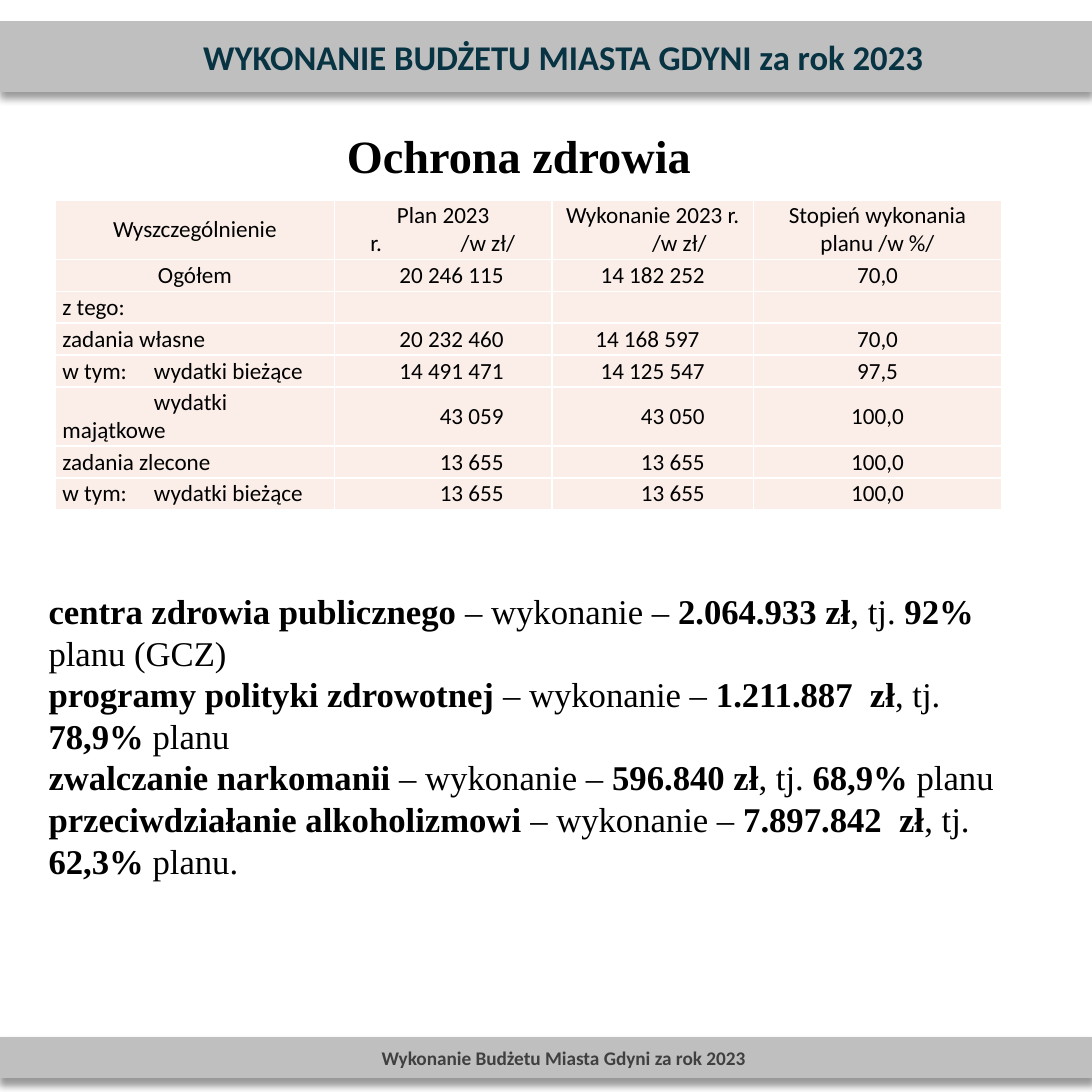
"""Build the health care slide of the city budget report."""
from dataclasses import dataclass
from itertools import cycle

from lxml import etree
from pptx import Presentation
from pptx.dml.color import RGBColor
from pptx.enum.shapes import MSO_SHAPE
from pptx.enum.text import MSO_ANCHOR, MSO_AUTO_SIZE, PP_ALIGN
from pptx.oxml.ns import qn
from pptx.util import Inches, Pt

RECT = MSO_SHAPE.RECTANGLE
TOP, MIDDLE = MSO_ANCHOR.TOP, MSO_ANCHOR.MIDDLE
NO_FIT = MSO_AUTO_SIZE.NONE
LEFT, CENTER, RIGHT = PP_ALIGN.LEFT, PP_ALIGN.CENTER, PP_ALIGN.RIGHT

COL_WIDTHS = [2.01, 1.57, 1.45, 1.79]
ROW_HEIGHTS = [0.43, 0.23, 0.23, 0.23, 0.23, 0.42, 0.23, 0.23]
COL_ALIGNS = [LEFT, RIGHT, RIGHT, CENTER]
COL_TABS = [[0.66], [0.21, 0.86], [0.67], []]
ROWS = [
    ["Wyszczególnienie", "Plan 2023\n\tr.\t/w zł/",
     "Wykonanie 2023 r.\n\t/w zł/", "Stopień wykonania planu /w %/"],
    ["Ogółem", "20 246 115", "14 182 252", "70,0"],
    ["z tego:", "", "", ""],
    ["zadania własne", "20 232 460", "14 168 597 ", "70,0"],
    ["w tym:\twydatki bieżące", "14 491 471", "14 125 547", "97,5"],
    ["\twydatki majątkowe", "43 059", "43 050", "100,0"],
    ["zadania zlecone", "13 655", "13 655", "100,0"],
    ["w tym:\twydatki bieżące", "13 655", "13 655", "100,0"],
]
PROGRAMMES = [
    ("centra zdrowia publicznego", "2.064.933 zł", "92%", " planu (GCZ)"),
    ("programy polityki zdrowotnej", "1.211.887  zł", "78,9%", " planu"),
    ("zwalczanie narkomanii", "596.840 zł", "68,9%", " planu"),
    ("przeciwdziałanie alkoholizmowi", "7.897.842  zł", "62,3%", " planu."),
]


@dataclass(frozen=True)
class Theme:
    """Colours, fonts and type sizes of the slide."""
    bar: str = "BFBFBF"
    header: str = "083343"
    footer: str = "404040"
    ink: str = "000000"
    cell: str = "FBEEE8"
    grid: str = "FFFFFF"
    sans: str = "Calibri"
    serif: str = "Times New Roman"
    title_size: int = 24
    text_size: int = 18
    table_size: int = 12
    footer_size: int = 10


class Deck:
    """Holds the theme and the current slide."""

    def __init__(self, prs, theme):
        self.theme = theme
        self.s = prs.slides.add_slide(prs.slide_layouts[1])

    def style(self, p, font, size, color, bold=False):
        for r in p.runs:
            r.font.name = font
            r.font.size = Pt(size)
            r.font.bold = bold
            r.font.color.rgb = RGBColor.from_string(color)

    def place(self, sp, left, top, width, height):
        sp.left, sp.top = Inches(left), Inches(top)
        sp.width, sp.height = Inches(width), Inches(height)
        tf = sp.text_frame
        tf.word_wrap = True
        tf.auto_size = NO_FIT
        tf.vertical_anchor = TOP
        return tf

    def bar(self, text, top, height, size, color):
        t = self.theme
        sp = self.s.shapes.add_shape(
            RECT, 0, Inches(top), Inches(7.87), Inches(height))
        sp.fill.solid()
        sp.fill.fore_color.rgb = RGBColor.from_string(t.bar)
        sp.line.color.rgb = RGBColor.from_string(t.bar)
        sp.line.width = Pt(1)
        sp.shadow.inherit = False
        effects = sp._element.spPr.find(qn("a:effectLst"))
        shadow = etree.SubElement(
            effects, qn("a:outerShdw"), blurRad=str(Pt(4)), dist=str(Pt(3)),
            dir="5400000", algn="t", rotWithShape="0")
        shade = etree.SubElement(shadow, qn("a:srgbClr"), val=t.ink)
        etree.SubElement(shade, qn("a:alpha"), val="40000")
        tf = sp.text_frame
        tf.margin_left = Inches(0.35)
        tf.vertical_anchor = MIDDLE
        tf.text = text
        p = tf.paragraphs[0]
        p.alignment = CENTER
        self.style(p, t.sans, size, color, True)

    def title(self, text):
        t = self.theme
        tf = self.place(self.s.shapes.title, 0.63, 0.87, 6.22, 0.5)
        tf.text = text
        p = tf.paragraphs[0]
        p.alignment = CENTER
        self.style(p, t.serif, t.title_size, t.ink, True)

    def programmes(self, items):
        t = self.theme
        tf = self.place(self.s.placeholders[1], 0.25, 4.2, 7.37, 2.52)
        for i, (name, amount, share, ending) in enumerate(items):
            p = tf.add_paragraph() if i else tf.paragraphs[0]
            p.space_before = Pt(0)
            p.line_spacing = 1.0
            pPr = p._p.get_or_add_pPr()
            pPr.set("marL", "0")
            pPr.set("indent", "0")
            etree.SubElement(pPr, qn("a:buNone"))
            parts = [name, " – wykonanie – ", amount, ", tj. ", share, ending]
            for text in parts:
                p.add_run().text = text
            self.style(p, t.serif, t.text_size, t.ink)
            for r, bold in zip(p.runs, cycle([True, False])):
                r.font.bold = bold

    def cell(self, cell, text, align, tabs):
        t = self.theme
        cell.margin_left = Inches(0.05)
        cell.margin_right = Inches(0.35 if align == RIGHT else 0.05)
        cell.margin_top = cell.margin_bottom = Inches(0.01)
        cell.vertical_anchor = MIDDLE
        tcPr = cell._tc.get_or_add_tcPr()
        for side in ("a:lnL", "a:lnR", "a:lnT", "a:lnB"):
            ln = etree.SubElement(tcPr, qn(side), w=str(Pt(1)))
            fill = etree.SubElement(ln, qn("a:solidFill"))
            etree.SubElement(fill, qn("a:srgbClr"), val=t.grid)
        cell.fill.solid()
        cell.fill.fore_color.rgb = RGBColor.from_string(t.cell)
        cell.text_frame.text = text
        for p in cell.text_frame.paragraphs:
            p.alignment = align
            self.style(p, t.sans, t.table_size, t.ink)
            if "\t" in p.text:
                p.alignment = LEFT
                stops = etree.SubElement(
                    p._p.get_or_add_pPr(), qn("a:tabLst"))
                for pos in tabs:
                    etree.SubElement(stops, qn("a:tab"),
                                     pos=str(Inches(pos)), algn="l")
            if not p.runs:
                etree.SubElement(p._p, qn("a:endParaRPr"),
                                 sz=str(t.table_size * 100))

    def table(self, rows):
        frame = self.s.shapes.add_table(
            len(rows), len(COL_WIDTHS), Inches(0.4), Inches(1.44),
            Inches(sum(COL_WIDTHS)), Inches(sum(ROW_HEIGHTS)))
        tbl = frame.table
        tbl.first_row = tbl.horz_banding = False
        for col, width in zip(tbl.columns, COL_WIDTHS):
            col.width = Inches(width)
        for i, row in enumerate(rows):
            tbl.rows[i].height = Inches(ROW_HEIGHTS[i])
            for j, text in enumerate(row):
                centered = i == 0 or (i == 1 and j == 0)
                align = CENTER if centered else COL_ALIGNS[j]
                self.cell(tbl.cell(i, j), text, align, COL_TABS[j])


def main():
    prs = Presentation()
    prs.slide_width = prs.slide_height = Inches(7.87)
    theme = Theme()
    deck = Deck(prs, theme)
    deck.bar("Wykonanie Budżetu Miasta Gdyni za rok 2023",
             7.48, 0.28, theme.footer_size, theme.footer)
    deck.bar("WYKONANIE BUDŻETU MIASTA GDYNI za rok 2023",
             0.16, 0.5, theme.text_size, theme.header)
    deck.title("Ochrona zdrowia")
    deck.programmes(PROGRAMMES)
    deck.table(ROWS)
    prs.save("out.pptx")


if __name__ == "__main__":
    main()
